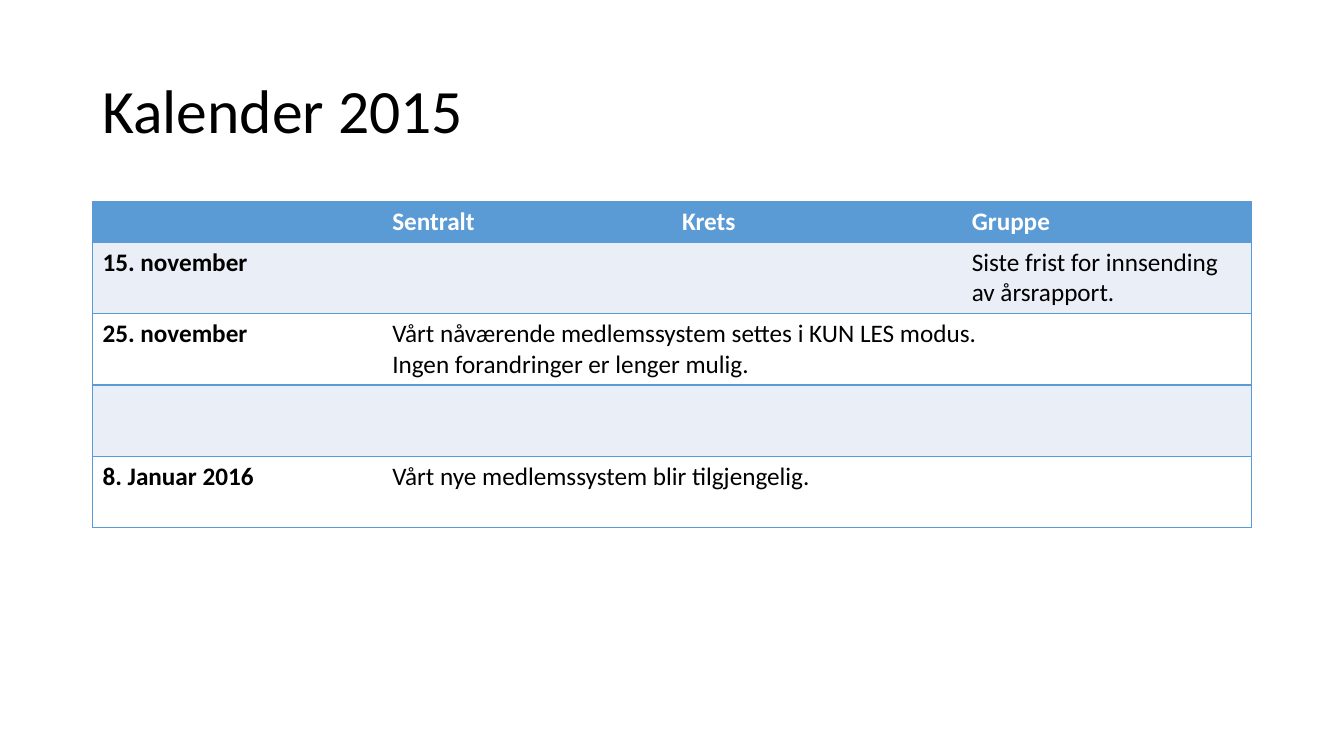
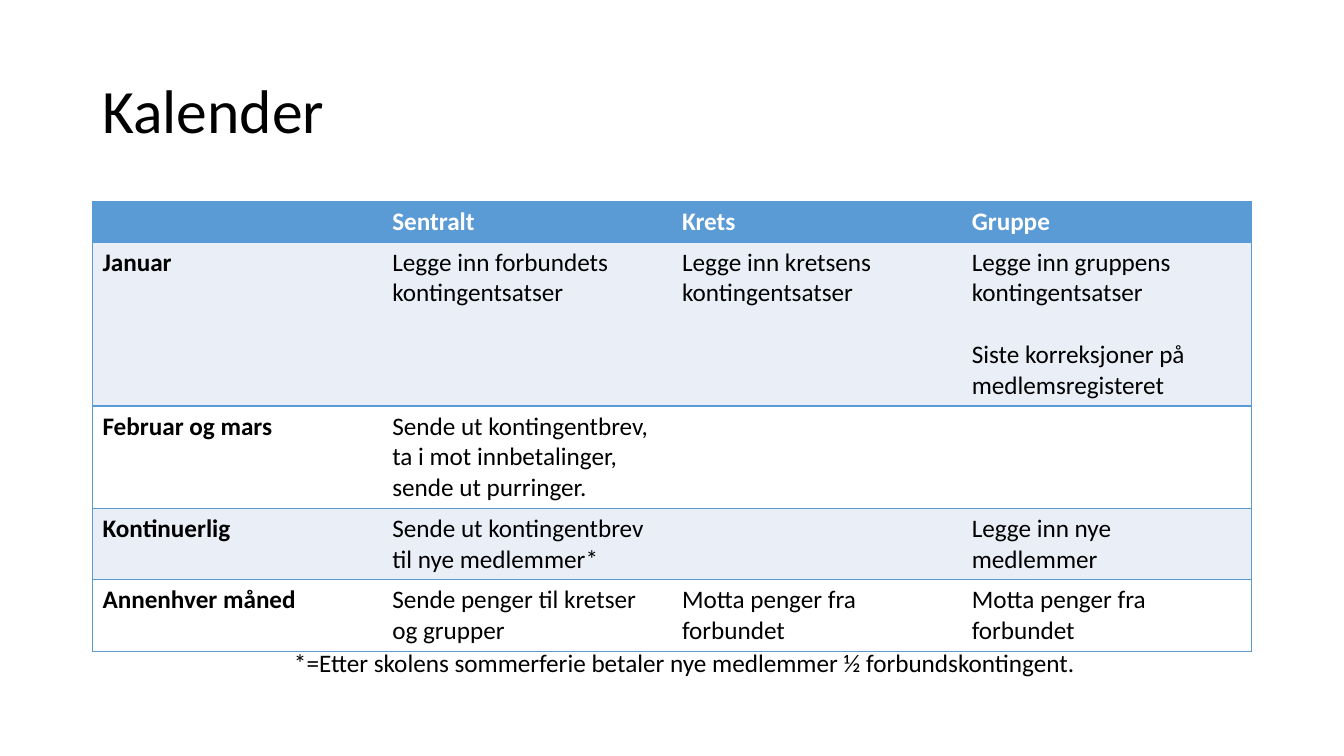
from lxml.etree import SubElement
from pptx import Presentation
from pptx.dml.color import RGBColor
from pptx.enum.text import MSO_ANCHOR
from pptx.oxml.ns import qn
from pptx.util import Cm, Pt

BLUE = RGBColor(0x5B, 0x9B, 0xD5)
PALE_BLUE = RGBColor(0xEA, 0xEF, 0xF7)
WHITE = RGBColor(0xFF, 0xFF, 0xFF)
BLACK = RGBColor(0x00, 0x00, 0x00)
FONT = "Calibri"

LEFT, WIDTH = Cm(2.33), Cm(29.21)
TABLE_TOP = Cm(5.08)
HEADER_HEIGHT = 1.02
HEADINGS = ["", "Sentralt", "Krets", "Gruppe"]

# Each row is a height in cm and its texts; the last text spans the columns left over.
# A line break is "\n", a new spaced paragraph "\n\n".
CALENDARS = [
    ("Kalender 2015", [
        (1.8, ["15. november", "", "", "Siste frist for innsending av årsrapport."]),
        (1.8, ["25. november", "Vårt nåværende medlemssystem settes i KUN LES modus.\n"
                               "Ingen forandringer er lenger mulig."]),
        (1.8, ["", ""]),
        (1.8, ["8. Januar 2016", "Vårt nye medlemssystem blir tilgjengelig."]),
    ], None),
    ("Kalender", [
        (4.13, ["Januar",
                "Legge inn forbundets kontingentsatser",
                "Legge inn kretsens kontingentsatser",
                "Legge inn gruppens kontingentsatser\n\n"
                "Siste korreksjoner på medlemsregisteret"]),
        (2.58, ["Februar og mars",
                "Sende ut kontingentbrev, ta i mot innbetalinger, sende ut purringer.", "", ""]),
        (1.8, ["Kontinuerlig", "Sende ut kontingentbrev til nye medlemmer*", "",
               "Legge inn nye medlemmer"]),
        (1.8, ["Annenhver måned", "Sende penger til kretser og grupper",
               "Motta penger fra forbundet", "Motta penger fra forbundet"]),
    ], "*=Etter skolens sommerferie betaler nye medlemmer ½ forbundskontingent."),
]


def write(frame, text, size=18, color=BLACK, bold=False):
    for number, block in enumerate(text.split("\n\n")):
        paragraph = frame.add_paragraph() if number else frame.paragraphs[0]
        if number:
            paragraph.space_before = Pt(22)
        for line_number, line in enumerate(block.split("\n")):
            if line_number:
                paragraph.add_line_break()
            run = paragraph.add_run()
            run.text = line
            run.font.name = FONT
            run.font.size = Pt(size)
            run.font.bold = bold
            run.font.color.rgb = color


def set_borders(cell, blue_sides):
    properties = cell._tc.get_or_add_tcPr()
    for side in "LRTB":
        line = SubElement(properties, qn(f"a:ln{side}"), w=str(Pt(1)))
        if side in blue_sides:
            fill = SubElement(line, qn("a:solidFill"))
            SubElement(fill, qn("a:srgbClr"), val=str(BLUE))
        else:
            SubElement(line, qn("a:noFill"))


deck = Presentation()
deck.slide_width, deck.slide_height = Cm(33.87), Cm(19.05)

for title, entries, footnote in CALENDARS:
    slide = deck.slides.add_slide(deck.slide_layouts[6])

    # Title
    heading = slide.shapes.add_textbox(LEFT, Cm(1.01), WIDTH, Cm(3.68)).text_frame
    heading.word_wrap = True
    heading.vertical_anchor = MSO_ANCHOR.MIDDLE
    write(heading, title, size=44)
    heading.paragraphs[0].line_spacing = 0.9

    # Calendar table
    rows = [(HEADER_HEIGHT, HEADINGS)] + entries
    last_column = len(HEADINGS) - 1
    total_height = Cm(sum(height for height, _ in rows))
    calendar = slide.shapes.add_table(
        len(rows), len(HEADINGS), LEFT, TABLE_TOP, WIDTH, total_height).table
    calendar.horz_banding = False

    for row, (height, texts) in enumerate(rows):
        calendar.rows[row].height = Cm(height)
        is_header = row == 0
        band = BLUE if is_header else PALE_BLUE if row % 2 else WHITE
        spans = len(texts) < len(HEADINGS)
        for column in range(len(HEADINGS)):
            cell = calendar.cell(row, column)
            at_right = column == last_column or (spans and column == len(texts) - 1)
            set_borders(cell, "TB" + "L" * (column == 0) + "R" * at_right)
            cell.fill.solid()
            cell.fill.fore_color.rgb = band
        if spans:
            calendar.cell(row, len(texts) - 1).merge(calendar.cell(row, last_column))
        for column, text in enumerate(texts):
            if text:
                write(calendar.cell(row, column).text_frame, text,
                      color=WHITE if is_header else BLACK,
                      bold=is_header or column == 0)

    # Footnote
    if footnote:
        note = slide.shapes.add_textbox(Cm(7.16), Cm(16.18), Cm(20.78), Cm(1.02)).text_frame
        note.word_wrap = True
        write(note, footnote)

deck.save("out.pptx")
